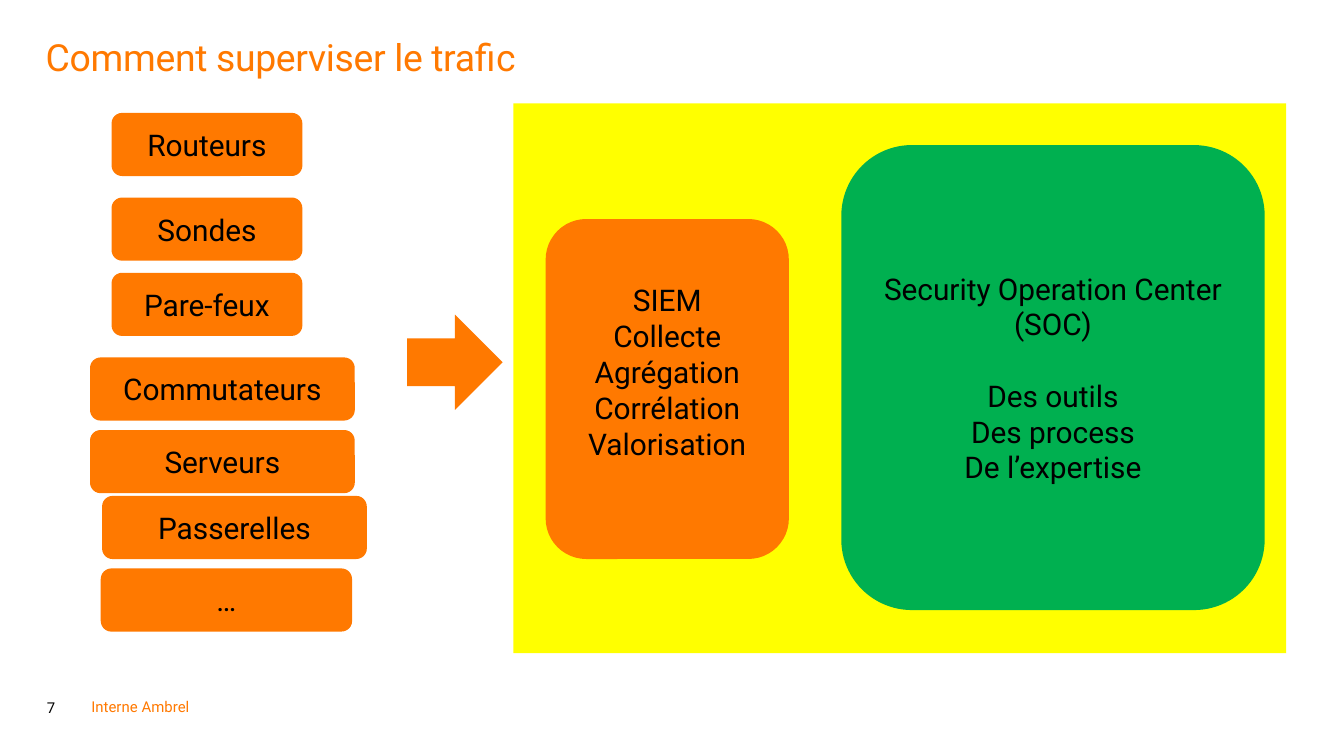
from pptx import Presentation
from pptx.dml.color import RGBColor
from pptx.enum.shapes import MSO_SHAPE
from pptx.enum.text import MSO_ANCHOR, MSO_AUTO_SIZE, PP_ALIGN
from pptx.util import Inches, Pt

ORANGE = RGBColor(0xFF, 0x79, 0x00)
YELLOW = RGBColor(0xFF, 0xFF, 0x00)
GREEN = RGBColor(0x00, 0xB0, 0x50)
BLACK = RGBColor(0x00, 0x00, 0x00)
FONT = "Roboto"


def add_run(paragraph, text, size, color):
    run = paragraph.add_run()
    run.text = text
    run.font.name = FONT
    run.font.size = Pt(size)
    run.font.color.rgb = color
    return run


def add_block(kind, left, top, width, height, color, lines=()):
    shape = slide.shapes.add_shape(
        kind, Inches(left), Inches(top), Inches(width), Inches(height))
    shape.shadow.inherit = False
    shape.fill.solid()
    shape.fill.fore_color.rgb = color
    shape.line.fill.background()
    frame = shape.text_frame
    frame.word_wrap = True
    frame.vertical_anchor = MSO_ANCHOR.MIDDLE
    for index, line in enumerate(lines):
        paragraph = frame.add_paragraph() if index else frame.paragraphs[0]
        paragraph.alignment = PP_ALIGN.CENTER
        add_run(paragraph, line, 16, BLACK)
    return frame


presentation = Presentation()
presentation.slide_width = Inches(10)
presentation.slide_height = Inches(10) * 9 // 16
slide = presentation.slides.add_slide(presentation.slide_layouts[5])

title = slide.shapes.title
title.left, title.top = Inches(0.34), Inches(0.29)
title.width, title.height = Inches(9.31), Inches(0.81)
title_frame = title.text_frame
title_frame.word_wrap = True
title_frame.auto_size = MSO_AUTO_SIZE.NONE
title_frame.vertical_anchor = MSO_ANCHOR.TOP
title_frame.margin_left = title_frame.margin_right = 0
title_frame.margin_top = title_frame.margin_bottom = 0
title_paragraph = title_frame.paragraphs[0]
title_paragraph.alignment = PP_ALIGN.LEFT
title_paragraph.line_spacing = 0.9
title_paragraph.space_before = Pt(0)
title_run = add_run(title_paragraph, "Comment superviser le trafic", 20, ORANGE)
title_run._r.get_or_add_rPr().set("spc", "-20")

add_block(MSO_SHAPE.RECTANGLE, 3.82, 0.77, 5.75, 4.09, YELLOW)

sources = [
    ("Routeurs", 0.83, 0.84, 1.42),
    ("Sondes", 0.83, 1.47, 1.42),
    ("Pare-feux", 0.83, 2.03, 1.42),
    ("Commutateurs", 0.67, 2.66, 1.97),
    ("Serveurs", 0.67, 3.2, 1.97),
    ("Passerelles", 0.76, 3.69, 1.97),
    ("…", 0.75, 4.23, 1.87),
]
for name, left, top, width in sources:
    add_block(MSO_SHAPE.ROUNDED_RECTANGLE, left, top, width, 0.47, ORANGE, [name])

add_block(MSO_SHAPE.RIGHT_ARROW, 3.03, 2.34, 0.71, 0.71, ORANGE)

siem_frame = add_block(
    MSO_SHAPE.ROUNDED_RECTANGLE, 4.06, 1.63, 1.81, 2.53, ORANGE,
    ["SIEM", "Collecte", "Agrégation", "Corrélation", "Valorisation"])
siem_frame.margin_bottom = Inches(0.31)

soc_frame = add_block(
    MSO_SHAPE.ROUNDED_RECTANGLE, 6.26, 1.08, 3.15, 3.46, GREEN,
    ["Security Operation Center (SOC)", "Des outils", "Des process", "De l’expertise"])
soc_frame.paragraphs[1].space_before = Pt(19)

footers = [
    ("7", 0.34, 4.96, 0.3, 0.37, 0.01, BLACK, MSO_ANCHOR.BOTTOM, True),
    ("Interne Ambrel", 0.68, 5.19, 0.81, 0.13, 0, ORANGE, MSO_ANCHOR.TOP, False),
]
for text, left, top, width, height, inset, color, anchor, wrap in footers:
    footer = slide.shapes.add_textbox(
        Inches(left), Inches(top), Inches(width), Inches(height))
    frame = footer.text_frame
    frame.word_wrap = wrap
    frame.vertical_anchor = anchor
    frame.margin_left = Inches(inset)
    frame.margin_right = frame.margin_top = frame.margin_bottom = 0
    add_run(frame.paragraphs[0], text, 8, color)

presentation.save("out.pptx")
